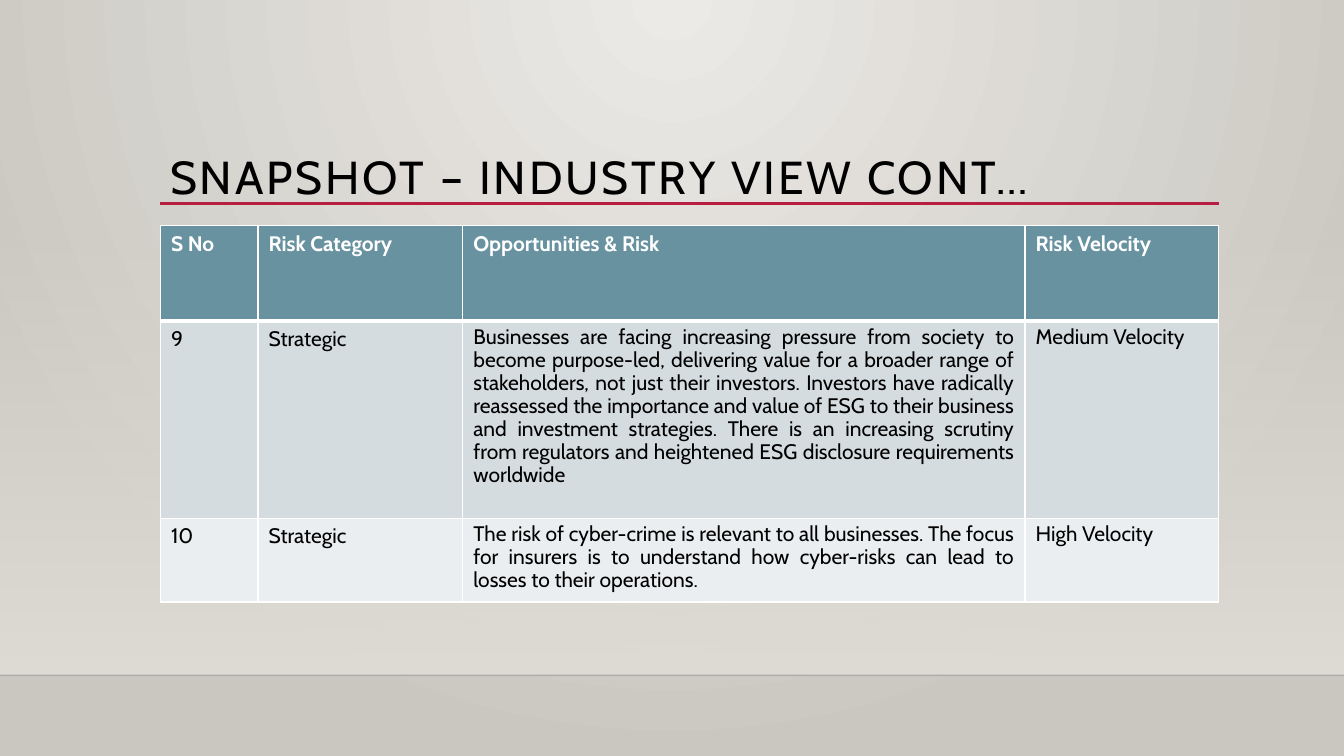
from lxml import etree
from pptx import Presentation
from pptx import util as u
from pptx.dml.color import RGBColor
from pptx.enum import shapes, text
from pptx.oxml import parse_xml
from pptx.oxml.ns import nsdecls, qn

COLORS = {
    "background light": "ECEAE7", "background dark": "CAC7C1", "floor": "DFDBD5",
    "floor edge": "000001", "accent": "B71E42", "text": "000000", "white": "FFFFFF",
    "header": "6892A0", "odd row": "D4DCDF", "even row": "EBEEF0",
}
FONT = "Cabin"
SLIDE_WIDTH = 33.87
LEFT, CONTENT_WIDTH = 4.04, 26.67
FLOOR_EDGE = 17.02

COLUMN_WIDTHS = [2.46, 5.16, 14.17, 4.88]
ROW_HEIGHTS = [2.39, 4.98, 2.11]
ROWS = [
    ["S No", "Risk Category", "Opportunities & Risk", "Risk Velocity"],
    ["9", "Strategic",
     "Businesses are facing increasing pressure from society to become purpose-led, "
     "delivering value for a broader range of stakeholders, not just their investors. "
     "Investors have radically reassessed the importance and value of ESG to their business "
     "and investment strategies. There is an increasing scrutiny from regulators and "
     "heightened ESG disclosure requirements worldwide",
     "Medium Velocity"],
    ["10", "Strategic",
     "The risk of cyber-crime is relevant to all businesses. The focus for insurers is to "
     "understand how cyber-risks can lead to losses to their operations.",
     "High Velocity"],
]


def rgb(name):
    return RGBColor.from_string(COLORS[name])


class SlideBuilder:
    def __init__(self, presentation):
        self.slide = presentation.slides.add_slide(presentation.slide_layouts[5])

    def gradient(self, fill, properties, stops, direction):
        """Replace a solid fill by a gradient; stops are (percent, colour, opacity)."""
        fill.solid()
        stop_xml = "".join(
            f'<a:gs pos="{position * 1000}"><a:srgbClr val="{COLORS[color]}">'
            f'<a:alpha val="{opacity * 1000}"/></a:srgbClr></a:gs>'
            for position, color, opacity in stops)
        solid = properties.find(qn("a:solidFill"))
        properties.replace(solid, parse_xml(
            f'<a:gradFill {nsdecls("a")} rotWithShape="1"><a:gsLst>{stop_xml}</a:gsLst>'
            f'{direction}</a:gradFill>'))

    def background(self):
        fill = self.slide.background.fill
        fill.solid()
        properties = self.slide.element.find(".//" + qn("p:bgPr"))
        self.gradient(
            fill, properties,
            [(0, "background light", 100), (100, "background dark", 100)],
            '<a:path path="circle"><a:fillToRect l="43000" r="43000" b="100000"/></a:path>')

    def panel(self, left, top, width, height):
        shape = self.slide.shapes.add_shape(
            shapes.MSO_SHAPE.RECTANGLE, u.Cm(left), u.Cm(top), u.Cm(width), u.Cm(height))
        shape.shadow.inherit = False
        shape.line.fill.background()
        self.gradient(shape.fill, shape.element.spPr,
                      [(0, "floor", 0), (100, "floor", 100)],
                      '<a:lin ang="5400000" scaled="0"/>')

    def rule(self, left, right, top, color, width, opacity=100):
        line = self.slide.shapes.add_connector(
            shapes.MSO_CONNECTOR.STRAIGHT, u.Cm(left), u.Cm(top), u.Cm(right), u.Cm(top))
        line.line.color.rgb = rgb(color)
        line.line.width = u.Pt(width)
        properties = line.element.spPr
        etree.SubElement(properties.find(".//" + qn("a:srgbClr")), qn("a:alpha"),
                         val=str(opacity * 1000))
        etree.SubElement(properties, qn("a:effectLst"))

    def add_run(self, paragraph, content, size, color, bold=False):
        run = paragraph.add_run()
        run.text = content
        run.font.name = FONT
        run.font.size = u.Pt(size)
        run.font.bold = bold
        run.font.color.rgb = rgb(color)
        return run

    def title(self, content, left, top, width, height):
        title = self.slide.shapes.title
        self.slide.shapes.element.append(title.element)
        title.left, title.top = u.Cm(left), u.Cm(top)
        title.width, title.height = u.Cm(width), u.Cm(height)
        frame = title.text_frame
        frame.word_wrap = True
        frame.auto_size = text.MSO_AUTO_SIZE.NONE
        frame.vertical_anchor = text.MSO_ANCHOR.BOTTOM
        frame.margin_left = frame.margin_right = u.Cm(0.25)
        frame.margin_top, frame.margin_bottom = u.Cm(0.13), 0
        paragraph = frame.paragraphs[0]
        paragraph.alignment = text.PP_ALIGN.LEFT
        paragraph.line_spacing = 0.9
        run = self.add_run(paragraph, content, 33, "text")
        run.font._element.set("spc", "200")

    def borders(self, cell, bottom_width, top_width):
        widths = {"lnL": 1, "lnR": 1, "lnT": top_width, "lnB": bottom_width}
        properties = cell._tc.get_or_add_tcPr()
        for index, (side, width) in enumerate(widths.items()):
            properties.insert(index, parse_xml(
                f'<a:{side} {nsdecls("a")} w="{u.Pt(width)}"><a:solidFill>'
                f'<a:srgbClr val="{COLORS["white"]}"/></a:solidFill></a:{side}>'))

    def table(self, rows, left, top, column_widths, row_heights):
        table = self.slide.shapes.add_table(
            len(rows), len(column_widths), u.Cm(left), u.Cm(top),
            u.Cm(sum(column_widths)), u.Cm(sum(row_heights))).table
        for column, width in zip(table.columns, column_widths):
            column.width = u.Cm(width)
        fills = ["header", "odd row", "even row"]
        for row_index, (row, height) in enumerate(zip(rows, row_heights)):
            table.rows[row_index].height = u.Cm(height)
            header = row_index == 0
            for column_index, content in enumerate(row):
                cell = table.cell(row_index, column_index)
                cell.margin_left = cell.margin_right = u.Cm(0.27)
                cell.margin_top = cell.margin_bottom = u.Cm(0.13)
                cell.fill.solid()
                cell.fill.fore_color.rgb = rgb(fills[row_index])
                self.borders(cell, 3 if header else 1, 3 if row_index == 1 else 1)
                paragraph = cell.text_frame.paragraphs[0]
                if not header and column_index >= 2:
                    paragraph.line_spacing = 0.9
                if not header and column_index == 2:
                    paragraph.alignment = text.PP_ALIGN.JUSTIFY
                self.add_run(paragraph, content, 15, "white" if header else "text", header)


def main():
    presentation = Presentation()
    presentation.slide_width, presentation.slide_height = u.Cm(SLIDE_WIDTH), u.Cm(19.05)
    builder = SlideBuilder(presentation)
    builder.background()
    builder.panel(0, 5.61, SLIDE_WIDTH, FLOOR_EDGE - 5.61)
    builder.rule(0, SLIDE_WIDTH, FLOOR_EDGE, "floor edge", 1, opacity=20)
    builder.rule(LEFT, LEFT + CONTENT_WIDTH, 5.13, "accent", 2.5)
    builder.title("SNAPSHOT – INDUSTRY VIEW CONT…", LEFT, 2.24, CONTENT_WIDTH, 2.92)
    builder.table(ROWS, LEFT, 5.69, COLUMN_WIDTHS, ROW_HEIGHTS)
    presentation.save("out.pptx")


if __name__ == "__main__":
    main()
